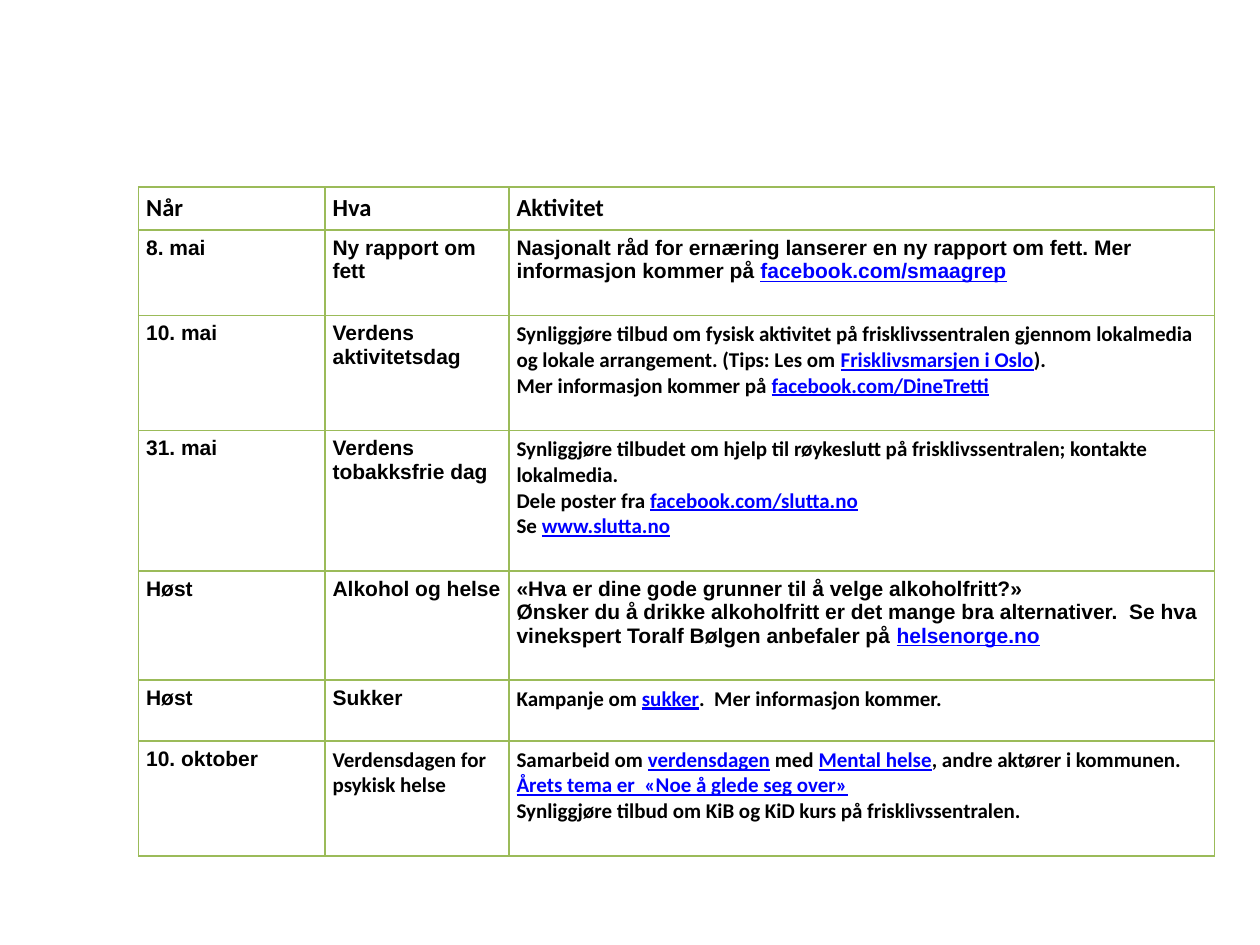
"""Build a one-slide calendar of public health activities as a table."""
import lxml.etree
import pptx
import pptx.dml.color
import pptx.oxml.ns
import pptx.util

THEME = {
    "text": "000000",
    "link": "0000FF",
    "border": "9BBB59",
    "border_width": pptx.util.Pt(1),
    "header_size": pptx.util.Pt(14),
    "body_size": pptx.util.Pt(12),
    "fonts": {"C": "Calibri", "A": "Arial"},
}
COLUMN_PERCENTS = [14.8, 14.6, 56]
ROWS = [
    (4.55, "CCC", ["Når", "Hva", "Aktivitet"]),
    (9.05, "AAA", [
        "8. mai",
        "Ny rapport om fett",
        "Nasjonalt råd for ernæring lanserer en ny rapport om fett. "
        "Mer informasjon kommer på |facebook.com/smaagrep|",
    ]),
    (12.17, "AAC", [
        "10. mai",
        "Verdens aktivitetsdag",
        "Synliggjøre tilbud om fysisk aktivitet på frisklivssentralen gjennom "
        "lokalmedia og lokale arrangement. (Tips: Les om |Frisklivsmarsjen i Oslo|).\n"
        "Mer informasjon kommer på |facebook.com/DineTretti|",
    ]),
    (14.87, "AAC", [
        "31. mai",
        "Verdens tobakksfrie dag",
        "Synliggjøre tilbudet om hjelp til røykeslutt på frisklivssentralen; "
        "kontakte lokalmedia.\n"
        "Dele poster fra |facebook.com/slutta.no|\n"
        "Se |www.slutta.no|",
    ]),
    (11.53, "AAA", [
        "Høst",
        "Alkohol og helse",
        "«Hva er dine gode grunner til å velge alkoholfritt?»\n"
        "Ønsker du å drikke alkoholfritt er det mange bra alternativer.  "
        "Se hva vinekspert Toralf Bølgen anbefaler på |helsenorge.no|",
    ]),
    (6.46, "AAC", [
        "Høst",
        "Sukker",
        "Kampanje om |sukker|.  Mer informasjon kommer.",
    ]),
    (12.17, "ACC", [
        "10. oktober",
        "Verdensdagen for psykisk helse",
        "Samarbeid om |verdensdagen| med |Mental helse|, andre aktører i kommunen. "
        "|Årets tema er  «Noe å glede seg over»|\n"
        "Synliggjøre tilbud om KiB og KiD kurs på frisklivssentralen.",
    ]),
]


def add_borders(cell):
    """Draw the theme border on all four sides of a cell."""
    properties = cell._tc.get_or_add_tcPr()
    qualified = pptx.oxml.ns.qn
    for position, side in enumerate(["a:lnL", "a:lnR", "a:lnT", "a:lnB"]):
        line = lxml.etree.Element(qualified(side), w=str(THEME["border_width"]))
        fill = lxml.etree.SubElement(line, qualified("a:solidFill"))
        lxml.etree.SubElement(fill, qualified("a:srgbClr"), val=THEME["border"])
        properties.insert(position, line)


def write_paragraph(paragraph, marked_text, font_name, size):
    """Write bold text in which the parts between bars look like links."""
    for index, part in enumerate(marked_text.split("|")):
        if part:
            is_link = index % 2 == 1
            run = paragraph.add_run()
            run.text = part
            run.font.name = font_name
            run.font.size = size
            run.font.bold = True
            run.font.underline = is_link
            color = THEME["link" if is_link else "text"]
            run.font.color.rgb = pptx.dml.color.RGBColor.from_string(color)


presentation = pptx.Presentation()
presentation.slide_width = pptx.util.Inches(10)
presentation.slide_height = pptx.util.Inches(7.5)
slide = presentation.slides.add_slide(presentation.slide_layouts[6])
column_unit = presentation.slide_width / 100
row_unit = presentation.slide_height / 100

table = slide.shapes.add_table(
    len(ROWS),
    len(COLUMN_PERCENTS),
    int(11 * column_unit),
    int(19.8 * row_unit),
    int(sum(COLUMN_PERCENTS) * column_unit),
    int(sum(row[0] for row in ROWS) * row_unit),
).table
table.first_row = False
table.horz_banding = False
for column, percent in zip(table.columns, COLUMN_PERCENTS):
    column.width = int(percent * column_unit)

for row_index, (percent, font_keys, texts) in enumerate(ROWS):
    table.rows[row_index].height = int(percent * row_unit)
    size = THEME["body_size"] if row_index else THEME["header_size"]
    for column_index, (font_key, text) in enumerate(zip(font_keys, texts)):
        cell = table.cell(row_index, column_index)
        cell.fill.background()
        add_borders(cell)
        cell.margin_left = cell.margin_right = pptx.util.Inches(0.06)
        cell.margin_top = cell.margin_bottom = pptx.util.Inches(0.05)
        text_frame = cell.text_frame
        for line_index, marked_text in enumerate(text.split("\n")):
            paragraph = text_frame.add_paragraph() if line_index else text_frame.paragraphs[0]
            write_paragraph(paragraph, marked_text, THEME["fonts"][font_key], size)

presentation.save("out.pptx")
